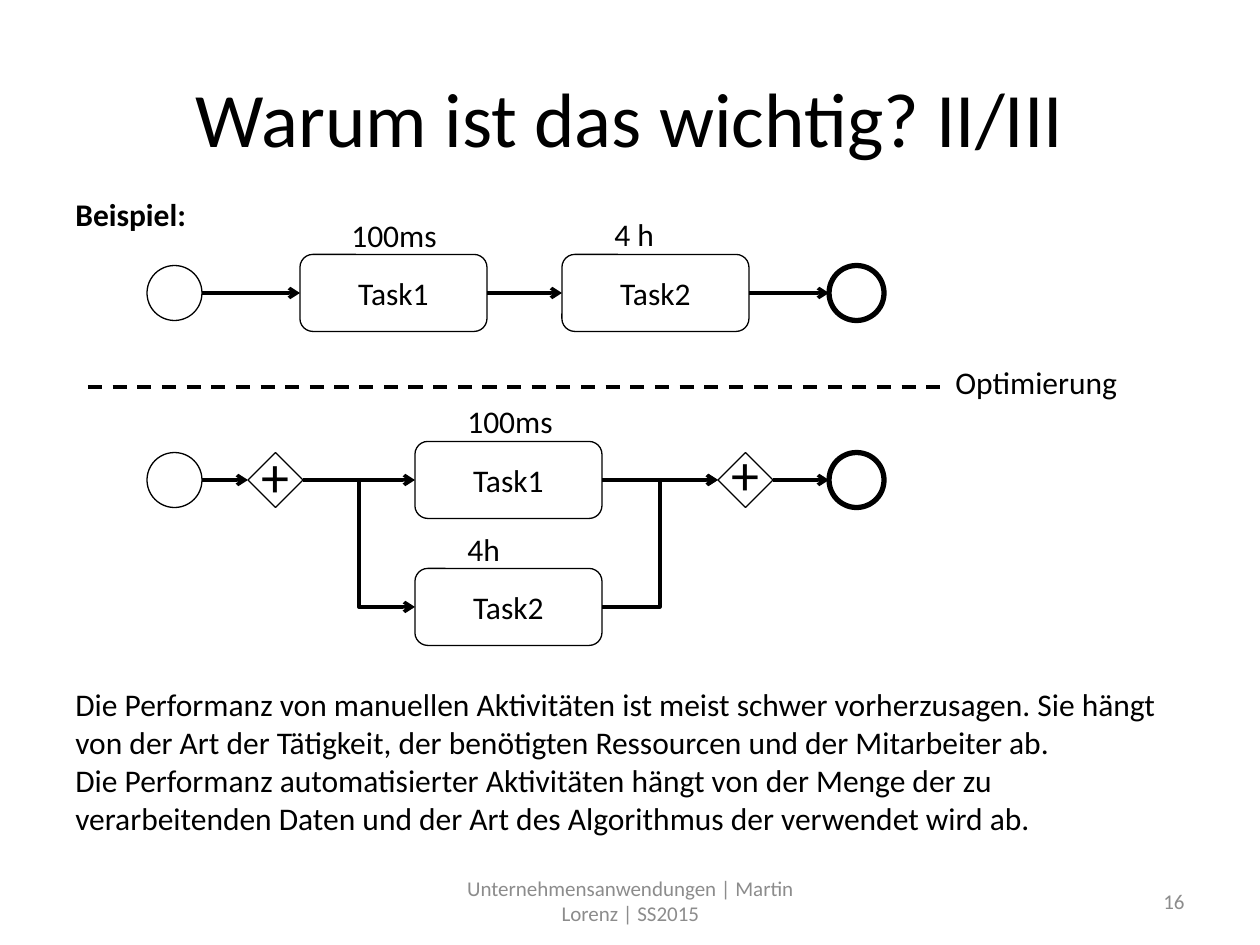
"""Build the slide comparing a sequential and a parallel task process."""
import lxml.etree
import pptx
import pptx.util
import pptx.dml.color
import pptx.enum.dml
import pptx.enum.shapes
import pptx.enum.text
import pptx.oxml.ns

PX = 914400 / 126
RGB = pptx.dml.color.RGBColor
SHAPE = pptx.enum.shapes.MSO_SHAPE
LINE = pptx.enum.shapes.MSO_CONNECTOR
ALIGN = pptx.enum.text.PP_ALIGN
ANCHOR = pptx.enum.text.MSO_ANCHOR
THEME = {
    "font": "Calibri", "ink": RGB(0, 0, 0), "paper": RGB(255, 255, 255),
    "muted": RGB(0x8C, 0x8C, 0x8C),
    "title": 44, "plus": 32, "body": 18, "footer": 12,
    "thin": 0.75, "flow": 2, "thick": 3,
}


def write(sp, box, text, size="body", color="ink", align=ALIGN.LEFT,
          anchor=ANCHOR.TOP, wrap=True, bold=False):
    sp.left, sp.top, sp.width, sp.height = [round(v * PX) for v in box]
    tf = sp.text_frame
    tf.text = text
    tf.word_wrap = wrap
    tf.vertical_anchor = anchor
    for p in tf.paragraphs:
        p.alignment = align
        for r in p.runs:
            r.font.name = THEME["font"]
            r.font.size = pptx.util.Pt(THEME[size])
            r.font.color.rgb = THEME[color]
            r.font.bold = bold


def connect(kind, points, arrow=True):
    c = s.shapes.add_connector(kind, *[round(v * PX) for v in points])
    c.line.color.rgb = THEME["ink"]
    c.line.width = pptx.util.Pt(THEME["flow"])
    spPr = c._element.spPr
    lxml.etree.SubElement(spPr, pptx.oxml.ns.qn("a:effectLst"))
    if arrow:
        ln = spPr.find(pptx.oxml.ns.qn("a:ln"))
        lxml.etree.SubElement(ln, pptx.oxml.ns.qn("a:tailEnd"), type="arrow")
    return c


prs = pptx.Presentation()
prs.slide_width = round(1260 * PX)
prs.slide_height = round(945 * PX)
s = prs.slides.add_slide(prs.slide_layouts[5])
write(s.shapes.title, (63, 38, 1134, 157), "Warum ist das wichtig? II/III", "title",
      align=ALIGN.CENTER, anchor=ANCHOR.MIDDLE)

ROW_SEQ, ROW_PAR, ROW_BRANCH = 293, 480, 607
START, SPLIT, JOIN, END = 147, 248, 718, 829
NODE, TASK_W, TASK_H = 55, 187, 77
SEQ_1, SEQ_2, PAR = 300, 562, 415

nodes = [(SHAPE.OVAL, x, y, NODE, NODE, "", weight)
         for y in (ROW_SEQ, ROW_PAR)
         for x, weight in ((START, "thin"), (END, "thick"))]
nodes += [(SHAPE.DIAMOND, x, ROW_PAR, NODE, NODE, "", "thin") for x in (SPLIT, JOIN)]
nodes += [(SHAPE.ROUNDED_RECTANGLE, x, y, TASK_W, TASK_H, text, "thin")
          for x, y, text in ((SEQ_1, ROW_SEQ, "Task1"), (SEQ_2, ROW_SEQ, "Task2"),
                             (PAR, ROW_PAR, "Task1"), (PAR, ROW_BRANCH, "Task2"))]
for kind, x, y, w, h, text, weight in nodes:
    sp = s.shapes.add_shape(kind, 0, 0, 0, 0)
    sp.shadow.inherit = False
    if kind == SHAPE.DIAMOND:
        sp.fill.solid()
        sp.fill.fore_color.rgb = THEME["paper"]
    else:
        sp.fill.background()
    sp.line.color.rgb = THEME["ink"]
    sp.line.width = pptx.util.Pt(THEME[weight])
    write(sp, (x, y - h / 2, w, h), text, align=ALIGN.CENTER, anchor=ANCHOR.MIDDLE)

for y, x1, x2 in ((ROW_SEQ, START + NODE, SEQ_1),
                  (ROW_SEQ, SEQ_1 + TASK_W, SEQ_2),
                  (ROW_SEQ, SEQ_2 + TASK_W, END),
                  (ROW_PAR, START + NODE, SPLIT),
                  (ROW_PAR, SPLIT + NODE, PAR),
                  (ROW_PAR, PAR + TASK_W, JOIN),
                  (ROW_PAR, JOIN + NODE, END)):
    connect(LINE.STRAIGHT, (x1, y, x2, y))
connect(LINE.ELBOW, (SPLIT + NODE, ROW_PAR, PAR, ROW_BRANCH))
connect(LINE.ELBOW, (PAR + TASK_W, ROW_BRANCH, JOIN, ROW_PAR))
divider = connect(LINE.STRAIGHT, (88, 387, 941, 387), arrow=False)
divider.line.dash_style = pptx.enum.dml.MSO_LINE.DASH

body = ("Die Performanz von manuellen Aktivitäten ist meist schwer vorherzusagen. "
        "Sie hängt von der Art der Tätigkeit, der benötigten Ressourcen und der "
        "Mitarbeiter ab.\n"
        "Die Performanz automatisierter Aktivitäten hängt von der Menge der zu "
        "verarbeitenden Daten und der Art des Algorithmus der verwendet wird ab.")
footer = {"size": "footer", "color": "muted", "anchor": ANCHOR.MIDDLE}
for box, text, style in (
        ((249, 435, 54, 81), "+", {"size": "plus", "wrap": False}),
        ((719, 433, 54, 81), "+", {"size": "plus", "wrap": False}),
        ((943, 357, 189, 50), "Optimierung", {"wrap": False}),
        ((339, 210, 112, 50), "100ms", {"wrap": False}),
        ((602, 209, 66, 50), "4 h", {"wrap": False}),
        ((455, 396, 112, 50), "100ms", {"wrap": False}),
        ((455, 524, 58, 50), "4h", {"wrap": False}),
        ((63, 189, 155, 50), "Beispiel:", {"bold": True}),
        ((63, 679, 1134, 165), body, {}),
        ((431, 876, 399, 50), "Unternehmensanwendungen | Martin Lorenz | SS2015",
         {**footer, "align": ALIGN.CENTER}),
        ((903, 876, 294, 50), "16", {**footer, "align": ALIGN.RIGHT})):
    write(s.shapes.add_textbox(0, 0, 0, 0), box, text, **style)

prs.save("out.pptx")
